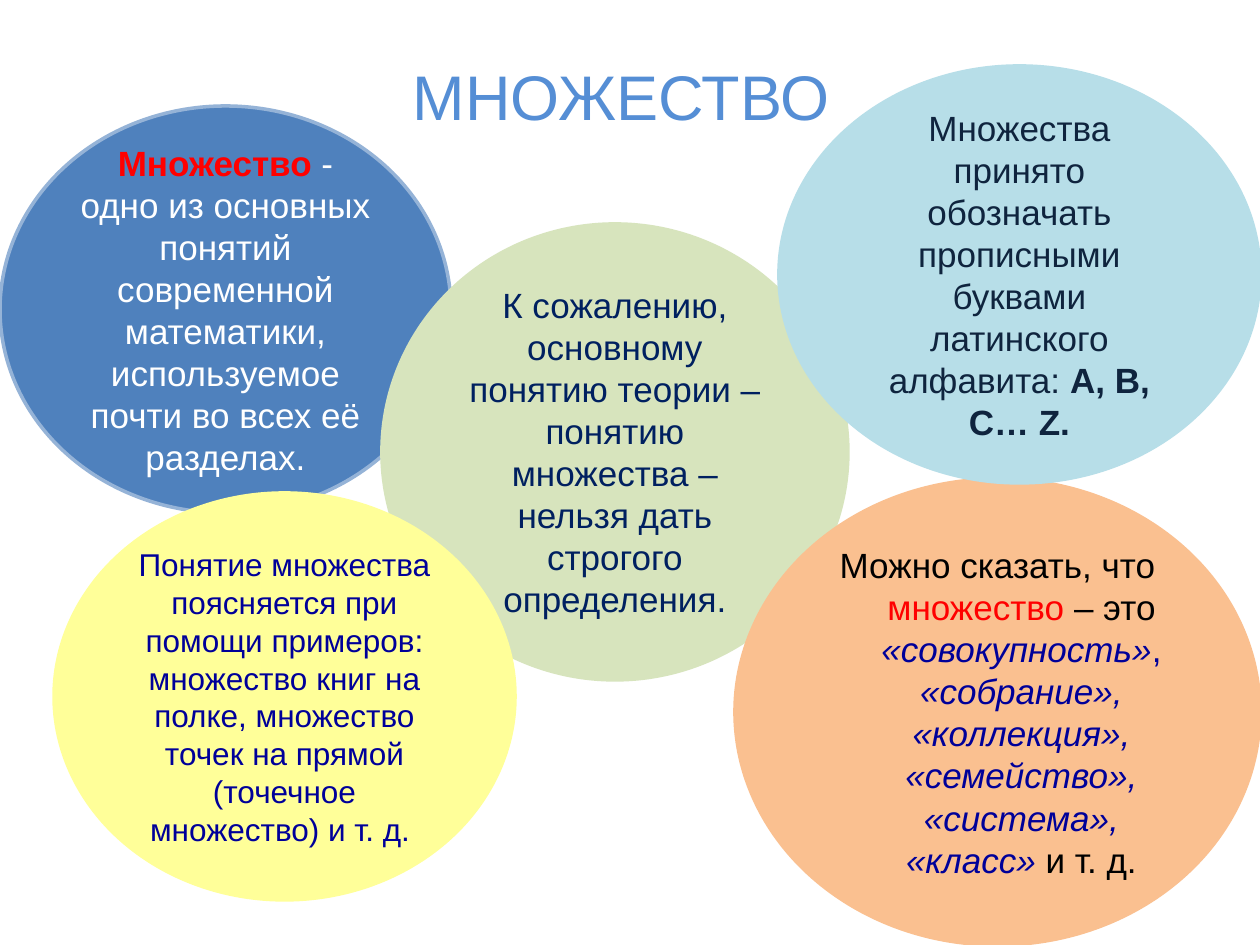
from lxml.etree import SubElement
from pptx import Presentation
from pptx.dml.color import RGBColor
from pptx.enum.shapes import MSO_SHAPE
from pptx.enum.text import MSO_ANCHOR, PP_ALIGN
from pptx.oxml.ns import qn
from pptx.util import Inches, Pt

PX = Inches(1) // 126
FONT = "Arial"

WHITE = RGBColor(0xFF, 0xFF, 0xFF)
BLACK = RGBColor(0x00, 0x00, 0x00)
RED = RGBColor(0xFF, 0x00, 0x00)
INDIGO = RGBColor(0x00, 0x00, 0x99)
NAVY = RGBColor(0x00, 0x20, 0x60)
DARK = RGBColor(0x0F, 0x24, 0x3E)
BLUE = RGBColor(0x4F, 0x81, 0xBD)
BLUE_EDGE = RGBColor(0x95, 0xB3, 0xD7)
GREEN = RGBColor(0xD7, 0xE4, 0xBD)
ORANGE = RGBColor(0xFA, 0xC0, 0x90)
YELLOW = RGBColor(0xFF, 0xFF, 0x99)
AQUA = RGBColor(0xB7, 0xDE, 0xE8)
TITLE_BLUE = RGBColor(0x55, 0x8E, 0xD5)
TITLE_EDGE = RGBColor(0x8E, 0xB4, 0xE3)

TITLE = "МНОЖЕСТВО"
TITLE_BOX = (343, 45, 556, 118)

# Back to front: box in px, fill, edge, text size, hanging indent in px,
# runs of (text, colour, extra font values)
ELLIPSES = [
    ((0, 106, 451, 407), BLUE, BLUE_EDGE, 20, 0, [
        ("Множество ", RED, {"bold": True}),
        ("- одно из основных понятий современной математики, "
         "используемое почти во всех её разделах.", WHITE, {}),
    ]),
    ((382, 224, 466, 456), GREEN, GREEN, 20, 0, [
        ("К сожалению, основному понятию теории – понятию множества – "
         "нельзя дать строгого определения.", NAVY, {}),
    ]),
    ((735, 479, 525, 466), ORANGE, ORANGE, 20, 48, [
        ("Можно сказать, что ", BLACK, {}),
        ("множество ", RED, {}),
        ("– это ", BLACK, {}),
        ("«совокупность»", INDIGO, {"italic": True}),
        (", ", INDIGO, {}),
        ("«собрание», «коллекция», «семейство», «система», «класс» ",
         INDIGO, {"italic": True}),
        ("и т. д.", BLACK, {}),
    ]),
    ((54, 493, 461, 407), YELLOW, YELLOW, 18, 0, [
        ("Понятие множества поясняется при помощи примеров: "
         "множество книг на полке, множество точек на прямой "
         "(точечное множество) и т. д. ", INDIGO, {}),
    ]),
    ((779, 66, 481, 417), AQUA, AQUA, 20, 0, [
        ("Множества принято обозначать прописными буквами "
         "латинского алфавита: ", DARK, {}),
        ("A, B, C… Z.", DARK, {"bold": True}),
    ]),
]


def scaled(box):
    return [value * PX for value in box]


def add_run(paragraph, text, size, color, **extra):
    run = paragraph.add_run()
    run.text = text
    values = {"name": FONT, "size": Pt(size), "bold": False, "italic": False}
    for name, value in (values | extra).items():
        setattr(run.font, name, value)
    run.font.color.rgb = color
    return run


def outline_text(run, color, width):
    properties = run.font._element
    line = SubElement(properties, qn("a:ln"), w=str(Pt(width)))
    fill = SubElement(line, qn("a:solidFill"))
    SubElement(fill, qn("a:srgbClr"), val=str(color))
    properties.insert(0, line)


def add_title(slide):
    title = slide.shapes.title
    title.left, title.top, title.width, title.height = scaled(TITLE_BOX)
    frame = title.text_frame
    frame.word_wrap = False
    frame.vertical_anchor = MSO_ANCHOR.TOP
    frame.margin_top = 13 * PX
    paragraph = frame.paragraphs[0]
    paragraph.alignment = PP_ALIGN.CENTER
    outline_text(add_run(paragraph, TITLE, 36, TITLE_BLUE), TITLE_EDGE, 1)


def add_ellipse(slide, box, fill, edge, size, indent, runs):
    ellipse = slide.shapes.add_shape(MSO_SHAPE.OVAL, *scaled(box))
    ellipse.shadow.inherit = False
    ellipse.fill.solid()
    ellipse.fill.fore_color.rgb = fill
    ellipse.line.color.rgb = edge
    ellipse.line.width = Pt(2)
    frame = ellipse.text_frame
    frame.word_wrap = True
    frame.vertical_anchor = MSO_ANCHOR.MIDDLE
    paragraph = frame.paragraphs[0]
    paragraph.alignment = PP_ALIGN.CENTER
    if indent:
        properties = paragraph._p.get_or_add_pPr()
        properties.set("marL", str(indent * PX))
        properties.set("indent", str(-indent * PX))
    for text, color, extra in runs:
        add_run(paragraph, text, size, color, **extra)


def main():
    presentation = Presentation()
    presentation.slide_width = 1260 * PX
    presentation.slide_height = 945 * PX
    slide = presentation.slides.add_slide(presentation.slide_layouts[5])
    add_title(slide)
    for ellipse in ELLIPSES:
        add_ellipse(slide, *ellipse)
    presentation.save("out.pptx")


if __name__ == "__main__":
    main()
